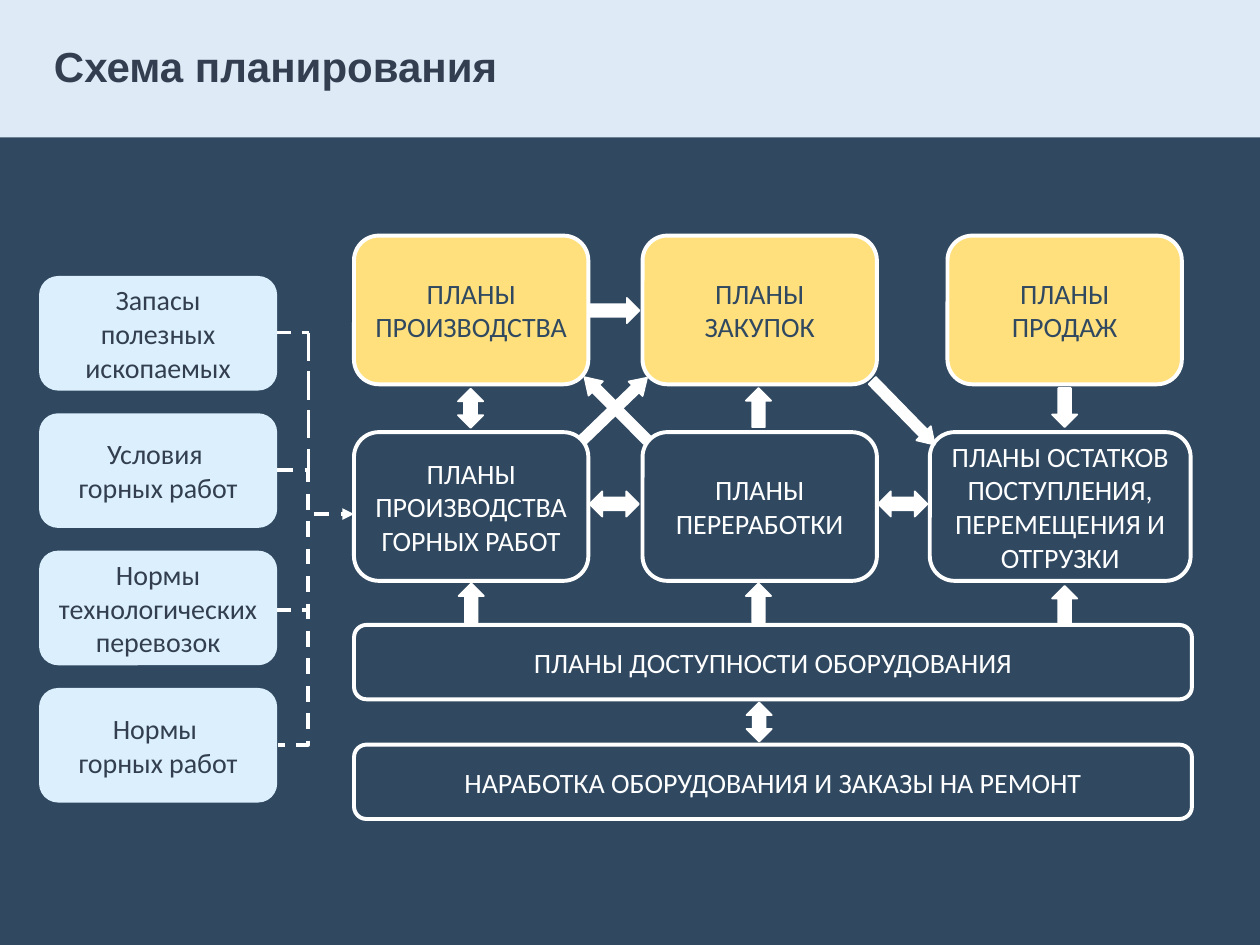
"""Build the planning scheme slide."""
from dataclasses import dataclass

from lxml import etree
from pptx import Presentation
from pptx import util as u
from pptx.dml.color import RGBColor
from pptx.enum import dml, shapes, text
from pptx.oxml.ns import qn

Shape = shapes.MSO_SHAPE
Line = shapes.MSO_CONNECTOR
Dash = dml.MSO_LINE


@dataclass(frozen=True)
class Theme:
    """Colours, fonts and sizes of the slide."""
    navy: str = "304961"
    band: str = "DEEBF7"
    ink: str = "333F50"
    white: str = "FFFFFF"
    yellow: str = "FFE07D"
    ice: str = "DBF0FC"
    head_font: str = "Arial"
    body_font: str = "Calibri"
    head_size: float = 24
    body_size: float = 16
    border: float = 2.25
    arrow_border: float = 1


def rgb(value):
    """Return a hex string as a colour."""
    return RGBColor.from_string(value)


def write(tf, content, *, font, size, color, bold=False, align=None, spacing=None):
    """Write one formatted paragraph, centred vertically, into a text frame."""
    tf.word_wrap = True
    tf.vertical_anchor = text.MSO_ANCHOR.MIDDLE
    p = tf.paragraphs[0]
    p.text = content.replace("\n", "\v")
    p.alignment = align
    p.line_spacing = spacing
    for r in p.runs:
        r.font.name, r.font.size, r.font.bold = font, u.Pt(size), bold
        r.font.color.rgb = rgb(color)


class Deck:
    """Holds the theme and the current slide."""

    def __init__(self, prs, theme):
        """Add a blank slide with the theme background."""
        self.theme = theme
        self.s = prs.slides.add_slide(prs.slide_layouts[6])
        self.s.background.fill.solid()
        self.s.background.fill.fore_color.rgb = rgb(theme.navy)

    def shape(self, kind, at, fill, line=None, width=0):
        """Add a filled preset shape."""
        sp = self.s.shapes.add_shape(kind, *map(u.Inches, at))
        sp.shadow.inherit = False
        sp.fill.solid()
        sp.fill.fore_color.rgb = rgb(fill)
        if line:
            sp.line.color.rgb = rgb(line)
            sp.line.width = u.Pt(width)
        else:
            sp.line.fill.background()
        return sp

    def title(self, content, at):
        """Add the slide heading."""
        t = self.theme
        tb = self.s.shapes.add_textbox(*map(u.Inches, at))
        write(tb.text_frame, content, font=t.head_font, size=t.head_size,
              color=t.ink, bold=True, spacing=0.9)

    def box(self, content, at, fill, color, line=None):
        """Add a rounded box with centred text."""
        t = self.theme
        sp = self.shape(Shape.ROUNDED_RECTANGLE, at, fill, line, t.border)
        write(sp.text_frame, content, font=t.body_font, size=t.body_size,
              color=color, align=text.PP_ALIGN.CENTER)

    def arrow(self, kind, at, rotation=0, adjust=()):
        """Add a white block arrow."""
        t = self.theme
        sp = self.shape(kind, at, t.white, t.white, t.arrow_border)
        sp.rotation = rotation
        for i, value in enumerate(adjust):
            sp.adjustments[i] = value

    def link(self, start, end, dash=Dash.DASH, width=2, kind=Line.STRAIGHT,
             head=False, bend=None):
        """Add a dashed connector, with an optional arrowhead or bend."""
        c = self.s.shapes.add_connector(kind, *map(u.Inches, (*start, *end)))
        c.line.color.rgb = rgb(self.theme.white)
        c.line.width = u.Pt(width)
        c.line.dash_style = dash
        sp_pr = c._element.spPr
        if head:
            etree.SubElement(sp_pr.find(qn("a:ln")), qn("a:tailEnd"), type="triangle")
        if bend is not None:
            guides = sp_pr.find(qn("a:prstGeom")).find(qn("a:avLst"))
            etree.SubElement(guides, qn("a:gd"), name="adj1",
                             fmla=f"val {round(bend * 100000)}")
        etree.SubElement(sp_pr, qn("a:effectLst"))


def main():
    """Compose and save the slide."""
    prs = Presentation()
    prs.slide_width, prs.slide_height = u.Inches(10), u.Inches(7.5)
    t = Theme()
    d = Deck(prs, t)
    d.shape(Shape.RECTANGLE, (0, 0, 10, 1.09), t.band)
    d.title("Схема планирования", (0.33, 0.16, 6.06, 0.78))

    inputs = ("Запасы полезных ископаемых", "Условия \nгорных работ",
              "Нормы технологических перевозок", "Нормы \nгорных работ")
    for i, content in enumerate(inputs):
        d.box(content, (0.31, 2.19 + 1.09 * i, 1.89, 0.91), t.ice, t.ink)

    goals = (("ПЛАНЫ ПРОИЗВОДСТВА", 2.81), ("ПЛАНЫ ЗАКУПОК", 5.1), ("ПЛАНЫ ПРОДАЖ", 7.52))
    for content, x in goals:
        d.box(content, (x, 1.87, 1.86, 1.18), t.yellow, t.navy, t.white)

    plans = (("ПЛАНЫ ПРОИЗВОДСТВА ГОРНЫХ РАБОТ", 2.81, 3.43, 1.86, 1.18),
             ("ПЛАНЫ ПЕРЕРАБОТКИ", 5.1, 3.43, 1.86, 1.18),
             ("ПЛАНЫ ОСТАТКОВ ПОСТУПЛЕНИЯ, ПЕРЕМЕЩЕНИЯ И ОТГРУЗКИ", 7.38, 3.43, 2.07, 1.18),
             ("ПЛАНЫ ДОСТУПНОСТИ ОБОРУДОВАНИЯ", 2.81, 4.96, 6.65, 0.59),
             ("НАРАБОТКА ОБОРУДОВАНИЯ И ЗАКАЗЫ НА РЕМОНТ", 2.81, 5.91, 6.65, 0.59))
    for content, *at in plans:
        d.box(content, at, t.navy, t.white, t.white)

    bus, edge = 2.45, 2.2
    d.link((edge, 3.73), (edge + 0.01, 5.91), width=t.border, kind=Line.ELBOW, bend=25)
    d.link((edge, 2.64), (bus, 2.64))
    d.link((bus, 2.64), (bus, 3.73), dash=Dash.LONG_DASH)
    d.link((edge, 4.84), (bus, 4.84))
    d.link((2.49, 4.08), (2.81, 4.08), width=t.border, head=True)

    for x, y in ((3.64, 4.63), (5.92, 4.63), (8.35, 4.65), (5.92, 3.08)):
        d.arrow(Shape.UP_ARROW, (x, y, 0.2, 0.31))
    d.arrow(Shape.DOWN_ARROW, (8.35, 3.08, 0.2, 0.31))
    d.arrow(Shape.UP_ARROW, (4.78, 2.27, 0.2, 0.39), 90)
    for x, y, rotation in ((4.81, 2.89, 315.1), (4.8, 2.89, 46), (7.09, 2.92, 135.7)):
        d.arrow(Shape.UP_ARROW, (x, y, 0.16, 0.71), rotation, (0.5, 0.79))
    for x, y, w, rotation in ((5.87, 5.63, 0.31, 270), (3.58, 3.14, 0.31, 270),
                              (4.68, 3.9, 0.39, 0), (6.97, 3.9, 0.39, 0)):
        d.arrow(Shape.LEFT_RIGHT_ARROW, (x, y, w, 0.2), rotation, (0.51, 0.5))

    prs.save("out.pptx")


if __name__ == "__main__":
    main()
